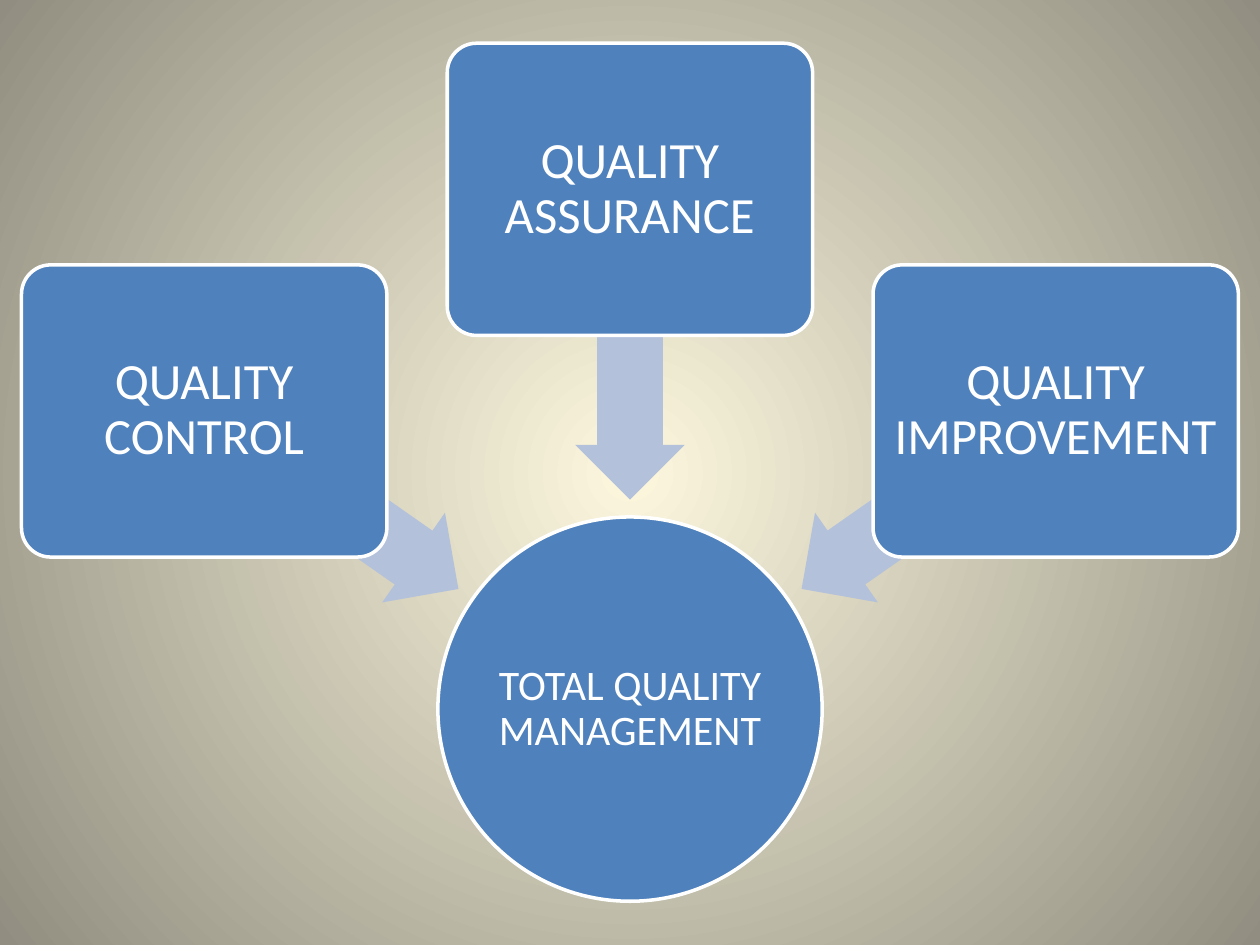
import math

from lxml import etree
from pptx import Presentation
from pptx.dml.color import RGBColor
from pptx.enum import shapes, text
from pptx.oxml import parse_xml
from pptx.oxml.ns import nsdecls, qn
from pptx.util import Pt

WHITE = RGBColor(0xFF, 0xFF, 0xFF)
BLUE = RGBColor(0x4F, 0x81, 0xBD)
PALE_BLUE = RGBColor(0xB3, 0xC1, 0xDB)
CREAM = RGBColor(0xFC, 0xF7, 0xDD)
TAUPE = RGBColor(0x91, 0x8E, 0x81)

FONT = "Calibri"
CONTRIBUTORS = [
    ("QUALITY CONTROL", 215),
    ("QUALITY ASSURANCE", 270),
    ("QUALITY IMPROVEMENT", 325),
]


def paint_background(slide):
    """Fill the slide with a radial gradient from cream to taupe."""
    fill = slide.background.fill
    fill.gradient()
    for stop, color, position in zip(fill.gradient_stops, (CREAM, TAUPE), (0, 1)):
        stop.color.rgb = color
        stop.position = position
    gradient = next(slide.element.iter(qn("a:gradFill")))
    gradient.remove(gradient.find(qn("a:lin")))
    circle = parse_xml(f'<a:path {nsdecls("a")} path="circle"/>')
    etree.SubElement(circle, qn("a:fillToRect"), l="50000", t="50000", r="50000", b="50000")
    gradient.find(qn("a:gsLst")).addnext(circle)


def add_centered(slide, kind, center, size, color, outline=None):
    """Add a flat preset shape around a centre point."""
    (x, y), (width, height) = center, size
    shape = slide.shapes.add_shape(
        kind, Pt(x - width / 2), Pt(y - height / 2), Pt(width), Pt(height)
    )
    shape.shadow.inherit = False
    shape.fill.solid()
    shape.fill.fore_color.rgb = color
    if outline is None:
        shape.line.fill.background()
    else:
        shape.line.color.rgb = outline
        shape.line.width = Pt(2)
    return shape


def write(shape, words, size, inset, color=WHITE):
    """Write centred words inside a shape."""
    frame = shape.text_frame
    frame.word_wrap = True
    frame.vertical_anchor = text.MSO_ANCHOR.MIDDLE
    frame.margin_left = frame.margin_right = Pt(inset)
    frame.margin_top = frame.margin_bottom = Pt(inset)
    paragraph = frame.paragraphs[0]
    paragraph.alignment = text.PP_ALIGN.CENTER
    paragraph.line_spacing = 0.9
    run = paragraph.add_run()
    run.text = words
    run.font.name = FONT
    run.font.size = Pt(size)
    run.font.color.rgb = color


def add_converging_diagram(slide, left, top, width, height):
    """Place contributors on an arc, each with an arrow to the goal below."""
    diameter = 219.6
    hub = (left + width / 2, top + height - diameter / 2)

    def on_arc(radius, angle):
        turn = math.radians(angle)
        return hub[0] + radius * math.cos(turn), hub[1] + radius * math.sin(turn)

    goal = add_centered(
        slide, shapes.MSO_SHAPE.OVAL, hub, (diameter, diameter), BLUE, WHITE
    )
    write(goal, "TOTAL QUALITY MANAGEMENT", size=24, inset=1.4)

    for words, angle in CONTRIBUTORS:
        arrow = add_centered(
            slide, shapes.MSO_SHAPE.LEFT_ARROW, on_arc(208.2, angle), (177, 62.6), PALE_BLUE
        )
        arrow.adjustments[0], arrow.adjustments[1] = 0.6, 0.5
        arrow.rotation = angle
        card = add_centered(
            slide, shapes.MSO_SHAPE.ROUNDED_RECTANGLE, on_arc(297, angle), (208.8, 167), BLUE, WHITE
        )
        card.adjustments[0] = 0.1
        write(card, words, size=29, inset=4.3)


def main():
    """Build and save the slide."""
    deck = Presentation()
    deck.slide_width, deck.slide_height = Pt(720), Pt(540)
    slide = deck.slides.add_slide(deck.slide_layouts[6])
    paint_background(slide)
    add_converging_diagram(slide, left=12, top=24.5, width=696, height=490.5)
    deck.save("out.pptx")


if __name__ == "__main__":
    main()
